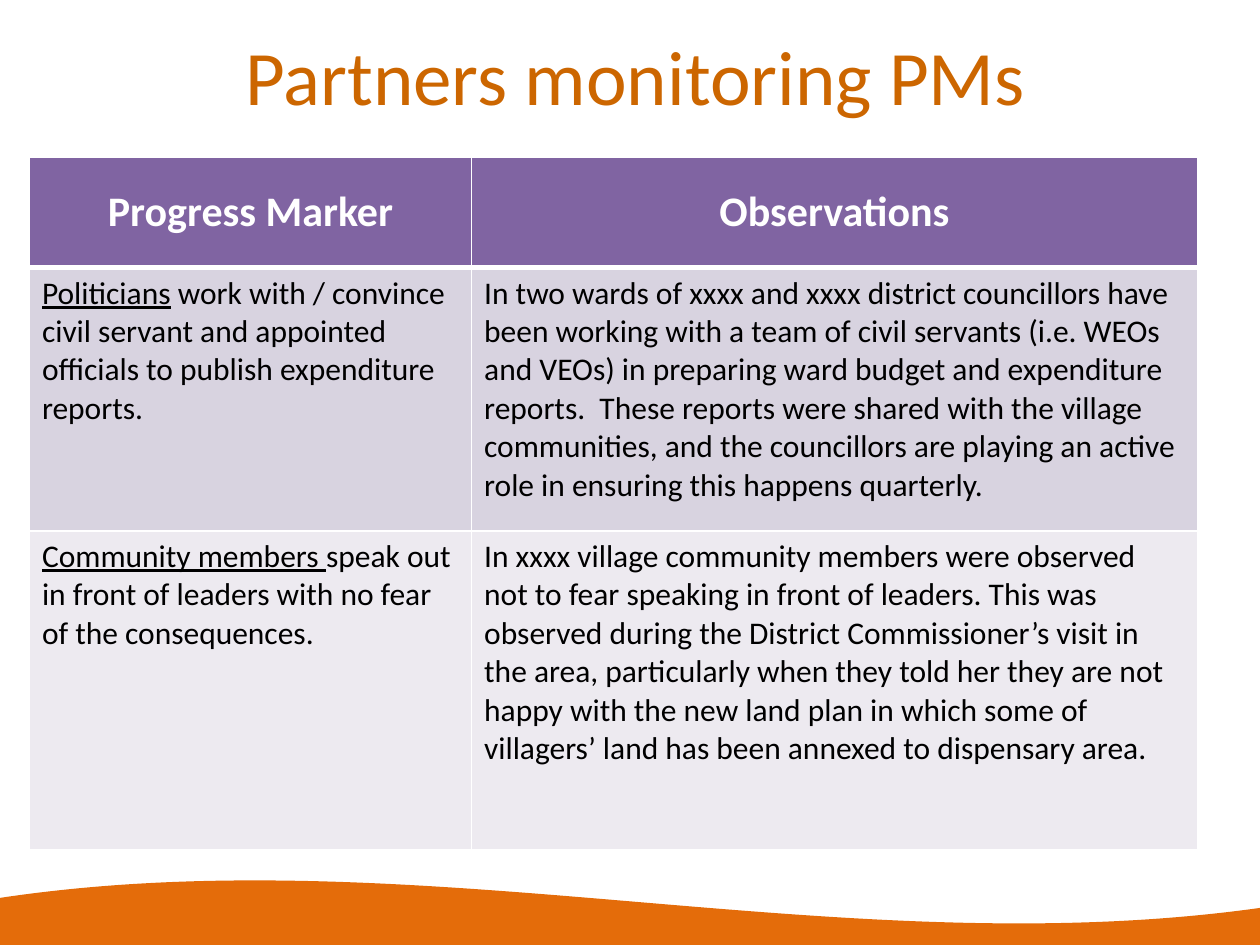
from lxml.etree import SubElement
from pptx import Presentation
from pptx.dml.color import RGBColor
from pptx.enum.shapes import MSO_SHAPE as Shape
from pptx.enum.text import MSO_ANCHOR as Anchor, PP_ALIGN as Align
from pptx.oxml.ns import qn
from pptx.util import Pt

COLORS = {
    "title": "CC6600",
    "wave": "E46C0A",
    "header": "8064A2",
    "band_dark": "D8D3E0",
    "band_light": "EDEAF0",
    "white": "FFFFFF",
    "black": "000000",
}
FONT = "Calibri"
TITLE = "Partners monitoring PMs"
HEADERS = ["Progress Marker", "Observations"]
# Each row: underlined actor, rest of the progress marker, observation
MARKERS = [
    ("Politicians",
     " work with / convince civil servant and appointed officials to publish "
     "expenditure reports.",
     "In two wards of xxxx and xxxx district councillors have been working with "
     "a team of civil servants (i.e. WEOs and VEOs) in preparing ward budget and "
     "expenditure reports.  These reports were shared with the village "
     "communities, and the councillors are playing an active role in ensuring "
     "this happens quarterly."),
    ("Community members ",
     "speak out in front of leaders with no fear of the consequences.",
     "In xxxx village community members were observed not to fear speaking in "
     "front of leaders. This was observed during the District Commissioner’s "
     "visit in the area, particularly when they told her they are not happy with "
     "the new land plan in which some of villagers’ land has been annexed to "
     "dispensary area."),
]
COLUMN_WIDTHS = [252.7, 414.7]
ROW_HEIGHTS = [63, 150.5, 182]


def color(name):
    return RGBColor.from_string(COLORS[name])


class SlideBuilder:
    def __init__(self, presentation):
        self.slide = presentation.slides.add_slide(presentation.slide_layouts[5])

    def style_font(self, paragraph, size, color_name, bold=False):
        font = paragraph.font
        font.name, font.size, font.bold = FONT, Pt(size), bold
        font.color.rgb = color(color_name)

    def title(self, text, left, top, width, height):
        shape = self.slide.shapes.title
        shape.left, shape.top = Pt(left), Pt(top)
        shape.width, shape.height = Pt(width), Pt(height)
        frame = shape.text_frame
        frame.text = text
        frame.vertical_anchor = Anchor.MIDDLE
        paragraph = frame.paragraphs[0]
        paragraph.alignment = Align.LEFT
        self.style_font(paragraph, 44, "title")

    def wave(self, left, top, width, height):
        shapes = self.slide.shapes
        shape = shapes.add_shape(Shape.WAVE, Pt(left), Pt(top), Pt(width), Pt(height))
        shape.shadow.inherit = False
        shape.fill.solid()
        shape.fill.fore_color.rgb = color("wave")
        shape.line.fill.background()

    def table(self, left, top, column_widths, row_heights):
        frame = self.slide.shapes.add_table(
            len(row_heights), len(column_widths), Pt(left), Pt(top),
            Pt(sum(column_widths)), Pt(sum(row_heights)))
        table = frame.table
        table.horz_banding = False
        for column, width in zip(table.columns, column_widths):
            column.width = Pt(width)
        for row, height in zip(table.rows, row_heights):
            row.height = Pt(height)
        return table

    def borders(self, cell, top=1, bottom=1):
        properties = cell._tc.get_or_add_tcPr()
        for side, width in (("L", 1), ("R", 1), ("T", top), ("B", bottom)):
            line = SubElement(properties, qn(f"a:ln{side}"), w=str(Pt(width)))
            fill = SubElement(line, qn("a:solidFill"))
            SubElement(fill, qn("a:srgbClr"), val=COLORS["white"])

    def fill(self, cell, color_name):
        cell.fill.solid()
        cell.fill.fore_color.rgb = color(color_name)

    def header_cell(self, cell, text):
        self.borders(cell, bottom=3)
        self.fill(cell, "header")
        cell.text = text
        cell.vertical_anchor = Anchor.MIDDLE
        paragraph = cell.text_frame.paragraphs[0]
        paragraph.alignment = Align.CENTER
        self.style_font(paragraph, 24, "white", bold=True)

    def body_cell(self, cell, text, fill, top_border, underlined=""):
        self.borders(cell, top=top_border)
        self.fill(cell, fill)
        paragraph = cell.text_frame.paragraphs[0]
        self.style_font(paragraph, 18, "black")
        if underlined:
            run = paragraph.add_run()
            run.text = underlined
            run.font.underline = True
        paragraph.add_run().text = text


def main():
    presentation = Presentation()
    presentation.slide_width, presentation.slide_height = Pt(720), Pt(540)
    builder = SlideBuilder(presentation)

    builder.wave(-14.4, 502.6, 756.7, 102.2)
    builder.title(TITLE, 133.2, 11.5, 550.8, 62.6)

    table = builder.table(16.8, 90, COLUMN_WIDTHS, ROW_HEIGHTS)
    for column, text in enumerate(HEADERS):
        builder.header_cell(table.cell(0, column), text)
    row_styles = [("band_dark", 3), ("band_light", 1)]
    for row, (marker, style) in enumerate(zip(MARKERS, row_styles), start=1):
        actor, action, observation = marker
        builder.body_cell(table.cell(row, 0), action, *style, underlined=actor)
        builder.body_cell(table.cell(row, 1), observation, *style)

    presentation.save("out.pptx")


if __name__ == "__main__":
    main()
